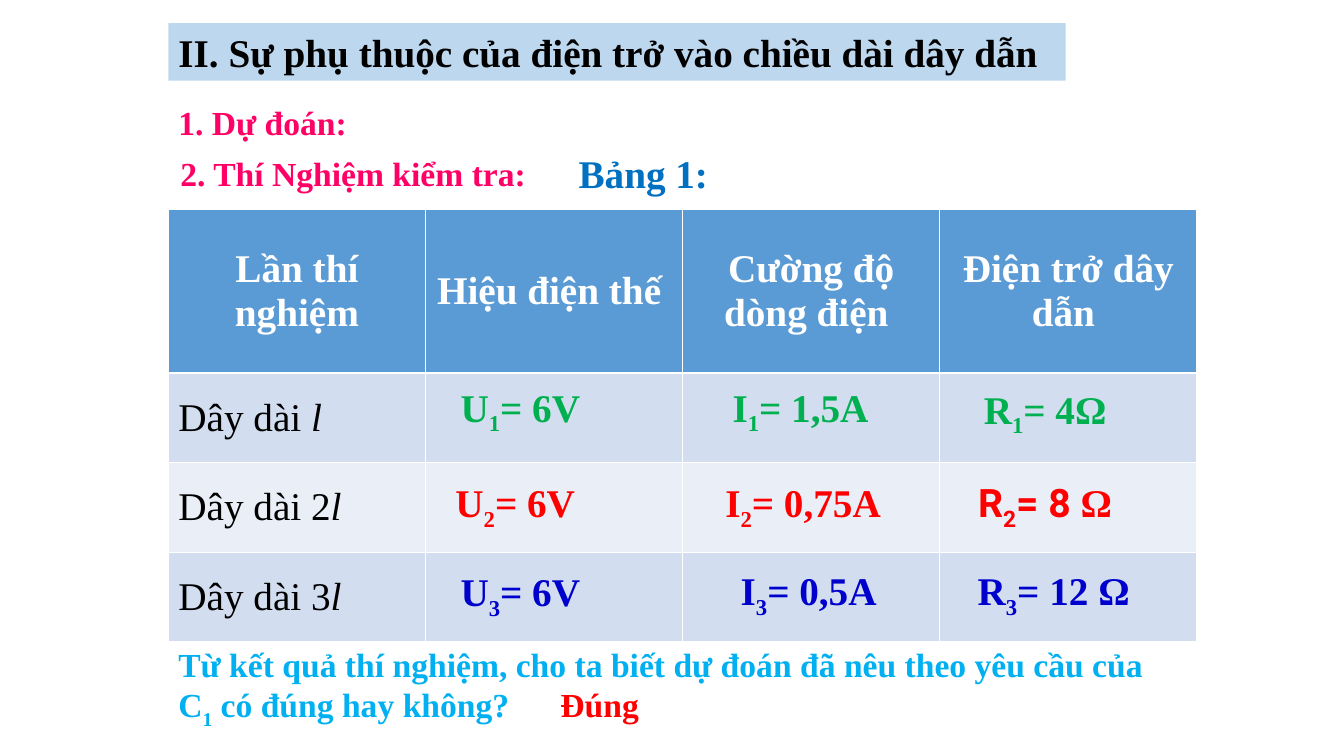
from pptx import Presentation
from pptx.dml.color import RGBColor
from pptx.enum.text import MSO_ANCHOR, MSO_AUTO_SIZE, PP_ALIGN
from pptx.util import Inches, Pt

LEFT, CENTER = PP_ALIGN.LEFT, PP_ALIGN.CENTER
MIDDLE, NO_FIT = MSO_ANCHOR.MIDDLE, MSO_AUTO_SIZE.NONE
SERIF, SANS = "Times New Roman", "Roboto"

BLACK = RGBColor(0x00, 0x00, 0x00)
WHITE = RGBColor(0xFF, 0xFF, 0xFF)
PINK = RGBColor(0xFF, 0x00, 0x66)
BLUE = RGBColor(0x00, 0x70, 0xC0)
SKY = RGBColor(0x00, 0xB0, 0xF0)
GREEN = RGBColor(0x00, 0xB0, 0x50)
RED = RGBColor(0xFF, 0x00, 0x00)
NAVY = RGBColor(0x00, 0x00, 0xCC)
TITLE_FILL = RGBColor(0xBD, 0xD7, 0xEE)
HEADER_FILL = RGBColor(0x5B, 0x9B, 0xD5)
BAND_FILLS = (RGBColor(0xEA, 0xEF, 0xF7), RGBColor(0xD2, 0xDE, 0xEF))

MARGIN = 1.67
COLUMN = 2.55
TABLE_TOP, HEADER_HEIGHT, ROW_HEIGHT = 2.08, 1.62, 0.89
LINE_28, LINE_24 = 0.57, 0.5

prs = Presentation()
prs.slide_width, prs.slide_height = Inches(13.33), Inches(7.5)
slide = prs.slides.add_slide(prs.slide_layouts[5])


def style(run, size, color, bold=True, font=SERIF):
    run.font.size = Pt(size)
    run.font.name = font
    run.font.bold = bold
    run.font.color.rgb = color


def add_label(text, left, top, width, height, size, color, align=LEFT, font=SERIF):
    """Text between underscores is set as a subscript."""
    box = slide.shapes.add_textbox(Inches(left), Inches(top), Inches(width), Inches(height))
    box.text_frame.word_wrap = True
    paragraph = box.text_frame.paragraphs[0]
    paragraph.alignment = align
    for i, part in enumerate(text.split("_")):
        run = paragraph.add_run()
        run.text = part
        style(run, size, color, font=font)
        if i % 2:
            run._r.get_or_add_rPr().set("baseline", "-25000")
    return paragraph


# Title
title = slide.shapes.title
title.left, title.top = Inches(MARGIN), Inches(0.23)
title.width, title.height = Inches(8.9), Inches(LINE_28)
title.fill.solid()
title.fill.fore_color.rgb = TITLE_FILL
title.text_frame.text = "II. Sự phụ thuộc của điện trở vào chiều dài dây dẫn"
title.text_frame.auto_size = NO_FIT
title.text_frame.vertical_anchor = MIDDLE
title.text_frame.paragraphs[0].alignment = LEFT
style(title.text_frame.paragraphs[0].runs[0], 28, BLACK)

# Section headings
add_label("1. Dự đoán:", MARGIN, 0.96, 6.83, LINE_24, 24, PINK)
add_label("2. Thí Nghiệm kiểm tra:", 1.69, 1.47, 6.83, LINE_24, 24, PINK)
add_label("Bảng 1:", 5.64, 1.43, 1.59, LINE_28, 28, BLUE)

# Results table
headers = ("Lần thí nghiệm", "Hiệu điện thế ", "Cường độ dòng điện ", "Điện trở dây dẫn ")
wires = ("Dây dài ", "Dây dài 2", "Dây dài 3")
results = slide.shapes.add_table(
    len(wires) + 1, len(headers), Inches(MARGIN), Inches(TABLE_TOP),
    Inches(COLUMN * len(headers)), Inches(HEADER_HEIGHT + ROW_HEIGHT * len(wires))).table
for column in results.columns:
    column.width = Inches(COLUMN)
for r, row in enumerate(results.rows):
    row.height = Inches(ROW_HEIGHT if r else HEADER_HEIGHT)
    for cell in row.cells:
        cell.vertical_anchor = MIDDLE
        cell.fill.solid()
        cell.fill.fore_color.rgb = BAND_FILLS[r % 2] if r else HEADER_FILL

for c, header in enumerate(headers):
    cell = results.cell(0, c)
    cell.text_frame.text = header
    cell.text_frame.paragraphs[0].alignment = CENTER
    style(cell.text_frame.paragraphs[0].runs[0], 28, WHITE)

for r, wire in enumerate(wires, start=1):
    paragraph = results.cell(r, 0).text_frame.paragraphs[0]
    for text in (wire, "l"):
        run = paragraph.add_run()
        run.text = text
        style(run, 28, BLACK, bold=False)
    run.font.italic = True

# Measured values: text, left, top, width
measurements = (
    (GREEN, (("U_1_= 6V", 4.2, 3.75, 1.92),
             ("I_1_= 1,5A", 6.71, 3.75, 2.46),
             ("R_1_= 4Ω", 9.22, 3.77, 2.29))),
    (RED, (("U_2_= 6V", 4.15, 4.7, 1.92),
           ("I_2_= 0,75A", 6.71, 4.7, 2.51))),
    (NAVY, (("U_3_= 6V", 4.2, 5.58, 1.92),
            ("I_3_= 0,5A", 6.83, 5.57, 2.38),
            ("R_3_= 12 Ω", 9.22, 5.57, 2.46))),
)
for color, values in measurements:
    for text, left, top, width in values:
        add_label(text, left, top, width, LINE_28, 28, color, CENTER)

# Second resistance, with its unit in the serif font
resistance = add_label("R_2_= 8", 9.22, 4.7, 2.29, LINE_28, 28, RED, CENTER, SANS)
ohm = resistance.add_run()
ohm.text = " Ω"
style(ohm, 28, RED)

# Question and answer
add_label("Từ kết quả thí nghiệm, cho ta biết dự đoán đã nêu theo yêu cầu của "
          "C_1_ có đúng hay không?", MARGIN, 6.34, 10.17, 0.91, 24, SKY)
add_label("Đúng", 5.46, 6.74, 1.27, LINE_24, 24, RED)

prs.save("out.pptx")
